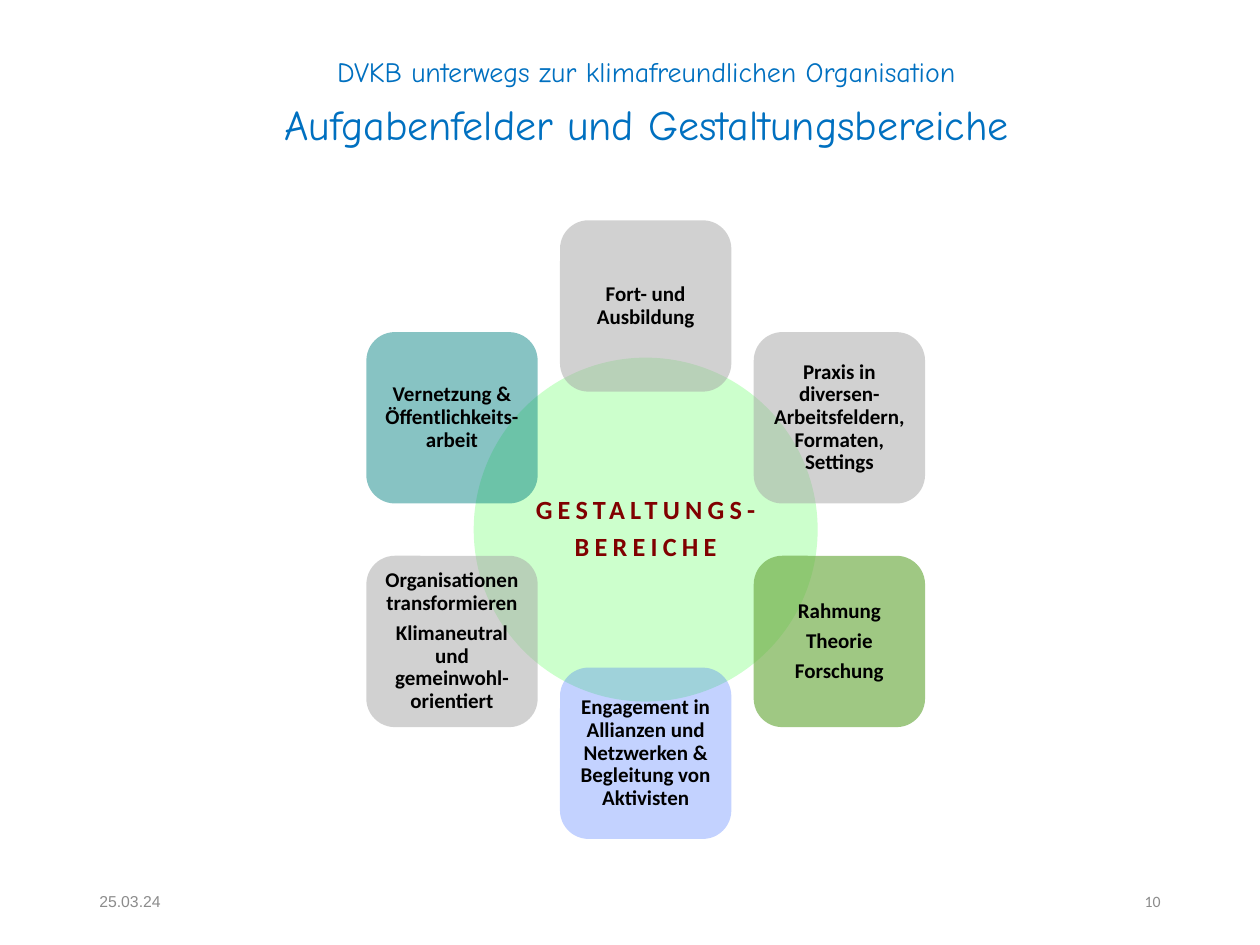
import math
from dataclasses import dataclass

from lxml import etree
from pptx import Presentation
from pptx import util as u
from pptx.dml.color import RGBColor
from pptx.enum import shapes, text
from pptx.oxml.ns import qn


@dataclass(frozen=True)
class Theme:
    # Colours
    heading: str = "0070C0"
    hub: str = "CCFFCC"
    hub_text: str = "800000"
    field_text: str = "000000"
    footer: str = "8C8C8C"
    grey: str = "A5A5A5"
    green: str = "70AD47"
    blue: str = "3366FF"
    teal: str = "008080"
    # Fonts and type sizes
    heading_font: str = "Comic Neue"
    body_font: str = "Calibri"
    date_font: str = "Arial"
    title_size: int = 24
    kicker_size: int = 16
    hub_size: int = 15
    field_size: int = 12
    footer_size: int = 9
    line_spacing: float = 0.9
    space_after: float = 0.35  # share of the type size


THEME = Theme()
WIDTH, HEIGHT = u.Inches(10), u.Inches(7.5)

# Ring layout, in shares of the slide width; the centre is (across, down)
CENTRE = (0.5125, 0.5605)
RING_RADIUS, HUB_SIZE, FIELD_SIZE = 0.1775, 0.273, 0.136

# Clockwise from the top: paragraphs, colour, opacity in percent
FIELDS = [
    (["Fort- und Ausbildung"], THEME.grey, 50),
    (["Praxis in diversen-\vArbeitsfeldern, Formaten, Settings"], THEME.grey, 50),
    (["Rahmung", "Theorie", "Forschung"], THEME.green, 67),
    (["Engagement in Allianzen und Netzwerken & Begleitung von Aktivisten"],
     THEME.blue, 29),
    (["Organisationen transformieren",
      "Klimaneutral und gemeinwohl-orientiert"], THEME.grey, 50),
    (["Vernetzung & Öffentlichkeits-arbeit"], THEME.teal, 47),
]


def write(frame, lines, font, size, color, align, bold=False, gap=0.0, leading=None):
    """Fill a text frame with evenly styled paragraphs."""
    frame.word_wrap = True
    frame.vertical_anchor = text.MSO_ANCHOR.MIDDLE
    for index, line in enumerate(lines):
        paragraph = frame.paragraphs[0] if index == 0 else frame.add_paragraph()
        paragraph.text = line
        paragraph.alignment = align
        paragraph.line_spacing = leading
        paragraph.space_after = u.Pt(gap * size)
        paragraph.font.name = font
        paragraph.font.size = u.Pt(size)
        paragraph.font.bold = bold
        paragraph.font.color.rgb = RGBColor.from_string(color)


def add_label(slide, share, line, font, size, color, align, leading=None):
    """Add a one-line text box placed by shares of the slide."""
    left, top, width, height = share
    label = slide.shapes.add_textbox(int(left * WIDTH), int(top * HEIGHT),
                                     int(width * WIDTH), int(height * HEIGHT))
    write(label.text_frame, [line], font, size, color, align, leading=leading)


def add_bubble(slide, preset, across, down, side, fill, opacity, lines, size, color):
    """Add a filled shape with bold text, centred on a point."""
    edge = int(side * WIDTH)
    bubble = slide.shapes.add_shape(preset, int(across * WIDTH) - edge // 2,
                                    int(down * HEIGHT) - edge // 2, edge, edge)
    bubble.shadow.inherit = False
    bubble.line.fill.background()
    bubble.fill.solid()
    bubble.fill.fore_color.rgb = RGBColor.from_string(fill)
    if opacity < 100:
        rgb = bubble.fill._xPr.find(".//" + qn("a:srgbClr"))
        etree.SubElement(rgb, qn("a:alpha"), val=str(opacity * 1000))
    frame = bubble.text_frame
    frame.margin_left = frame.margin_right = u.Inches(0.02)
    frame.margin_top = frame.margin_bottom = u.Inches(0.02)
    write(frame, lines, THEME.body_font, size, color, text.PP_ALIGN.CENTER,
          True, THEME.space_after, THEME.line_spacing)
    return bubble


def add_hub(slide):
    hub = add_bubble(slide, shapes.MSO_SHAPE.OVAL, *CENTRE, HUB_SIZE, THEME.hub, 100,
                     ["GESTALTUNGS-", "BEREICHE"], THEME.hub_size, THEME.hub_text)
    for paragraph in hub.text_frame.paragraphs:
        for run in paragraph.runs:
            run.font._element.set("spc", "300")  # letter spacing


def add_ring(slide):
    for index, (lines, fill, opacity) in enumerate(FIELDS):
        angle = math.tau * index / len(FIELDS)
        across = CENTRE[0] + RING_RADIUS * math.sin(angle)
        down = CENTRE[1] - RING_RADIUS * math.cos(angle) * WIDTH / HEIGHT
        add_bubble(slide, shapes.MSO_SHAPE.ROUNDED_RECTANGLE, across, down, FIELD_SIZE,
                   fill, opacity, lines, THEME.field_size, THEME.field_text)


def main():
    deck = Presentation()
    deck.slide_width, deck.slide_height = WIDTH, HEIGHT
    slide = deck.slides.add_slide(deck.slide_layouts[6])
    align = text.PP_ALIGN

    # Diagram
    add_hub(slide)
    add_ring(slide)

    # Footer
    add_label(slide, (0.069, 0.927, 0.225, 0.053), "25.03.24", THEME.date_font,
              THEME.footer_size, THEME.footer, align.LEFT)
    add_label(slide, (0.706, 0.927, 0.225, 0.053), "10", THEME.body_font,
              THEME.footer_size, THEME.footer, align.RIGHT)

    # Headings
    add_label(slide, (0.067, 0.109, 0.892, 0.05),
              "Aufgabenfelder und Gestaltungsbereiche", THEME.heading_font,
              THEME.title_size, THEME.heading, align.CENTER, THEME.line_spacing)
    add_label(slide, (0.067, 0.033, 0.892, 0.09),
              "DVKB unterwegs zur klimafreundlichen Organisation", THEME.heading_font,
              THEME.kicker_size, THEME.heading, align.CENTER, THEME.line_spacing)

    deck.save("out.pptx")


if __name__ == "__main__":
    main()
